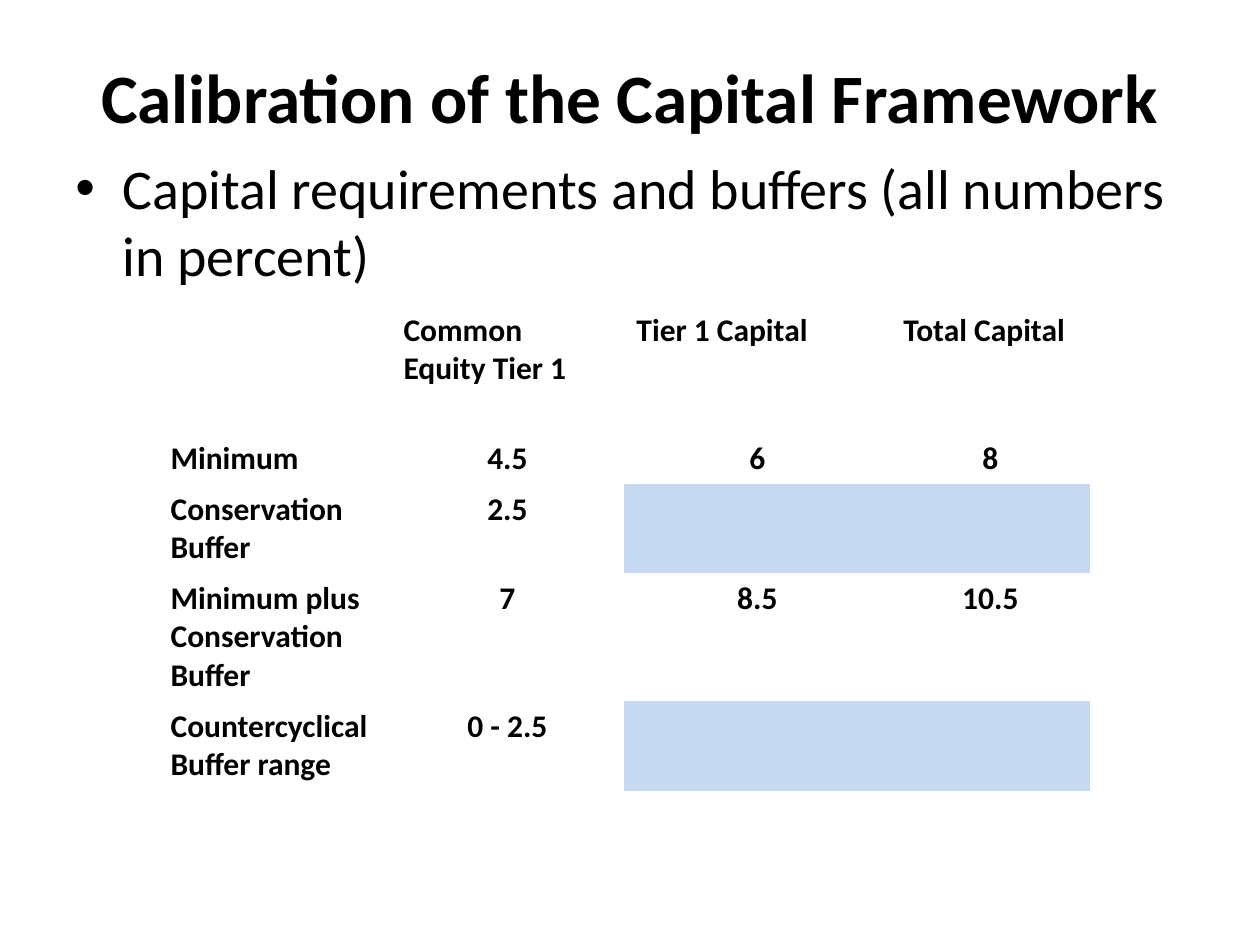
from pptx import Presentation
from pptx.dml.color import RGBColor
from pptx.enum.text import MSO_ANCHOR as Anchor, PP_ALIGN as Align
from pptx.oxml.ns import qn
from pptx.util import Pt
from lxml.etree import SubElement

EMU_PER_PX = 914400 / 126
PLAIN_TABLE_STYLE = "{2D5ABB26-0587-4C30-8999-92F81FD0307C}"


def px(length):
    return round(length * EMU_PER_PX)


def color(hex_code):
    return RGBColor.from_string(hex_code)


class SlideBuilder:
    font_name = "Calibri"
    ink = "000000"
    shade = "C6D9F1"

    def __init__(self, slide):
        self.slide = slide

    def set_text(self, paragraph, text, size, bold=False, align=Align.LEFT):
        paragraph.text = text
        paragraph.alignment = align
        font = paragraph.font
        font.name, font.size, font.bold = self.font_name, Pt(size), bold
        font.color.rgb = color(self.ink)

    def title(self, text, left, top, width, height):
        title = self.slide.shapes.title
        title.left, title.top = px(left), px(top)
        title.width, title.height = px(width), px(height)
        frame = title.text_frame
        frame.vertical_anchor = Anchor.TOP
        frame.margin_top = px(16)
        self.set_text(frame.paragraphs[0], text, 39.6, True, Align.CENTER)

    def bullet(self, text, left, top, width, height, indent=47):
        box = self.slide.shapes.add_textbox(px(left), px(top), px(width), px(height))
        box.text_frame.word_wrap = True
        paragraph = box.text_frame.paragraphs[0]
        self.set_text(paragraph, text, 32)
        properties = paragraph._p.get_or_add_pPr()
        properties.set("marL", str(px(indent)))
        properties.set("indent", str(-px(indent)))
        # The bullet must come before the default run properties.
        run_defaults = properties.find(qn("a:defRPr"))
        SubElement(properties, qn("a:buFont")).set("typeface", "Arial")
        SubElement(properties, qn("a:buChar")).set("char", "•")
        properties.append(run_defaults)

    def table(self, rows, left, top, widths, heights):
        """Draw a borderless table; a None value gives a shaded cell."""
        table = self.slide.shapes.add_table(
            len(rows), len(widths), px(left), px(top),
            px(sum(widths)), px(sum(heights))).table
        table._tbl.tblPr.find(qn("a:tableStyleId")).text = PLAIN_TABLE_STYLE
        table.first_row = table.horz_banding = False
        for column, width in zip(table.columns, widths):
            column.width = px(width)
        for row, height in zip(table.rows, heights):
            row.height = px(height)
        for r, values in enumerate(rows):
            for c, value in enumerate(values):
                cell = table.cell(r, c)
                if value is None:
                    cell.fill.solid()
                    cell.fill.fore_color.rgb = color(self.shade)
                align = Align.CENTER if r and c else Align.LEFT
                self.set_text(cell.text_frame.paragraphs[0], value or "", 18, True, align)


def main():
    deck = Presentation()
    deck.slide_width, deck.slide_height = px(1260), px(945)
    title_only = deck.slide_layouts[5]
    builder = SlideBuilder(deck.slides.add_slide(title_only))

    builder.title("Calibration of the Capital Framework", 63, 38, 1134, 277)
    builder.bullet("Capital requirements and buffers (all numbers in percent)",
                   63, 147, 1134, 697)
    capital_levels = [
        ["", "Common Equity Tier 1", "Tier 1 Capital", "Total Capital"],
        ["Minimum", "4.5", "6", "8"],
        ["Conservation Buffer", "2.5", None, None],
        ["Minimum plus Conservation Buffer", "7", "8.5", "10.5"],
        ["Countercyclical Buffer range", "0 - 2.5", None, None],
    ]
    builder.table(capital_levels, 158, 305, widths=[233, 233, 267, 199],
                  heights=[128, 51, 89, 128, 90])
    deck.save("out.pptx")


if __name__ == "__main__":
    main()
